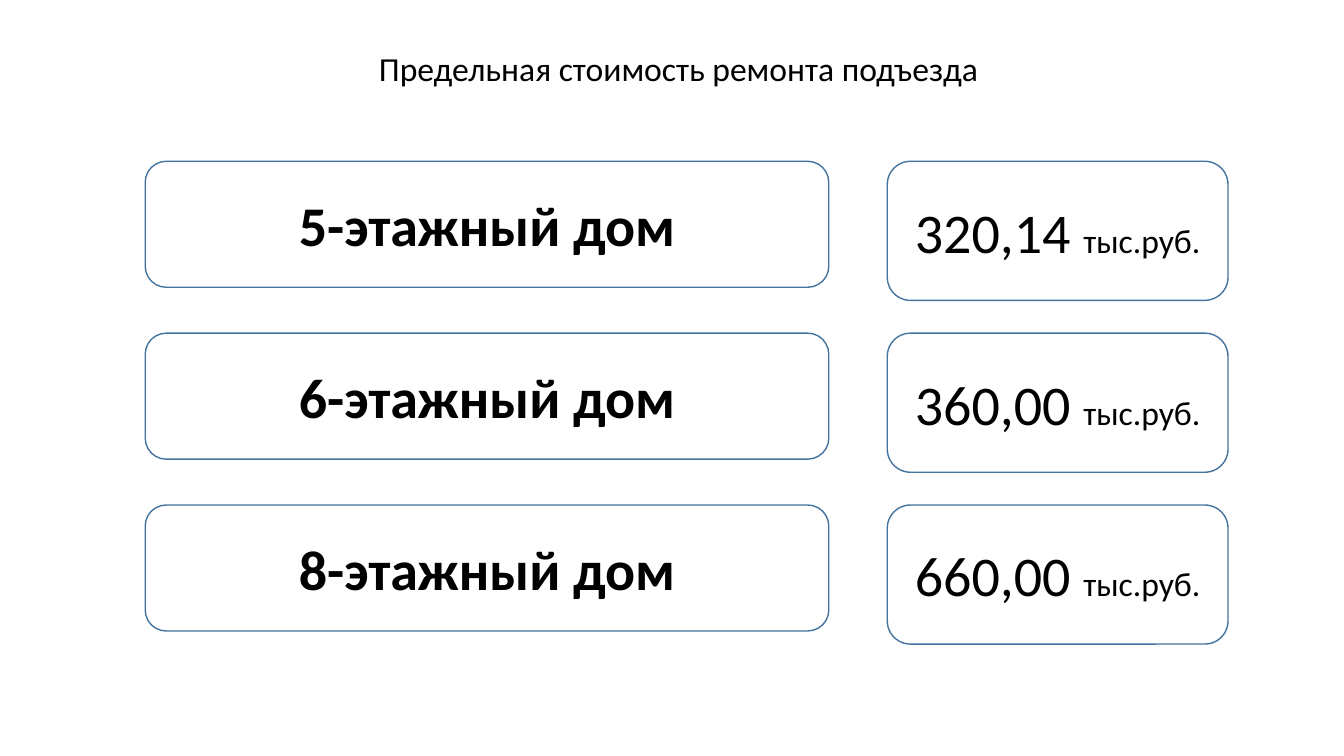
import pptx
import pptx.util
import pptx.dml.color
import pptx.enum.shapes
import pptx.enum.text
from dataclasses import dataclass

Inches = pptx.util.Inches


@dataclass(frozen=True)
class Theme:
    font: str = "Calibri"
    text: str = "000000"
    outline: str = "43739E"
    large: int = 40
    small: int = 24


theme = Theme()


def add_run(p, text, size=theme.large, bold=False):
    r = p.add_run()
    r.text = text
    r.font.name = theme.font
    r.font.size = pptx.util.Pt(size)
    r.font.bold = bold
    r.font.color.rgb = pptx.dml.color.RGBColor.from_string(theme.text)


def add_box(s, left, top, width, height):
    sp = s.shapes.add_shape(
        pptx.enum.shapes.MSO_SHAPE.ROUNDED_RECTANGLE,
        Inches(left), Inches(top), Inches(width), Inches(height))
    sp.shadow.inherit = False
    sp.fill.background()
    sp.line.color.rgb = pptx.dml.color.RGBColor.from_string(theme.outline)
    sp.line.width = pptx.util.Pt(1)
    tf = sp.text_frame
    tf.word_wrap = True
    tf.vertical_anchor = pptx.enum.text.MSO_ANCHOR.MIDDLE
    p = tf.paragraphs[0]
    p.alignment = pptx.enum.text.PP_ALIGN.CENTER
    return p


prs = pptx.Presentation()
prs.slide_width = Inches(13.33)
prs.slide_height = Inches(7.5)
s = prs.slides.add_slide(prs.slide_layouts[5])

title = s.shapes.title
title.left, title.top = Inches(0.98), Inches(0.51)
title.width, title.height = Inches(11.5), Inches(0.39)
tf = title.text_frame
tf.word_wrap = True
tf.auto_size = pptx.enum.text.MSO_AUTO_SIZE.NONE
tf.vertical_anchor = pptx.enum.text.MSO_ANCHOR.MIDDLE
p = tf.paragraphs[0]
p.alignment = pptx.enum.text.PP_ALIGN.CENTER
p.line_spacing = 0.9
add_run(p, "Предельная стоимость ремонта подъезда", size=theme.small)

costs = [(5, "320,14"), (6, "360,00"), (8, "660,00")]
first_top, row_step = 1.6, 1.705

for i, (floors, cost) in enumerate(costs):
    top = first_top + i * row_step
    p = add_box(s, 1.44, top, 6.78, 1.25)
    add_run(p, f"{floors}-этажный дом", bold=True)
    p = add_box(s, 8.8, top, 3.38, 1.38)
    add_run(p, f"{cost} ")
    add_run(p, "тыс.руб.", size=theme.small)

prs.save("out.pptx")
